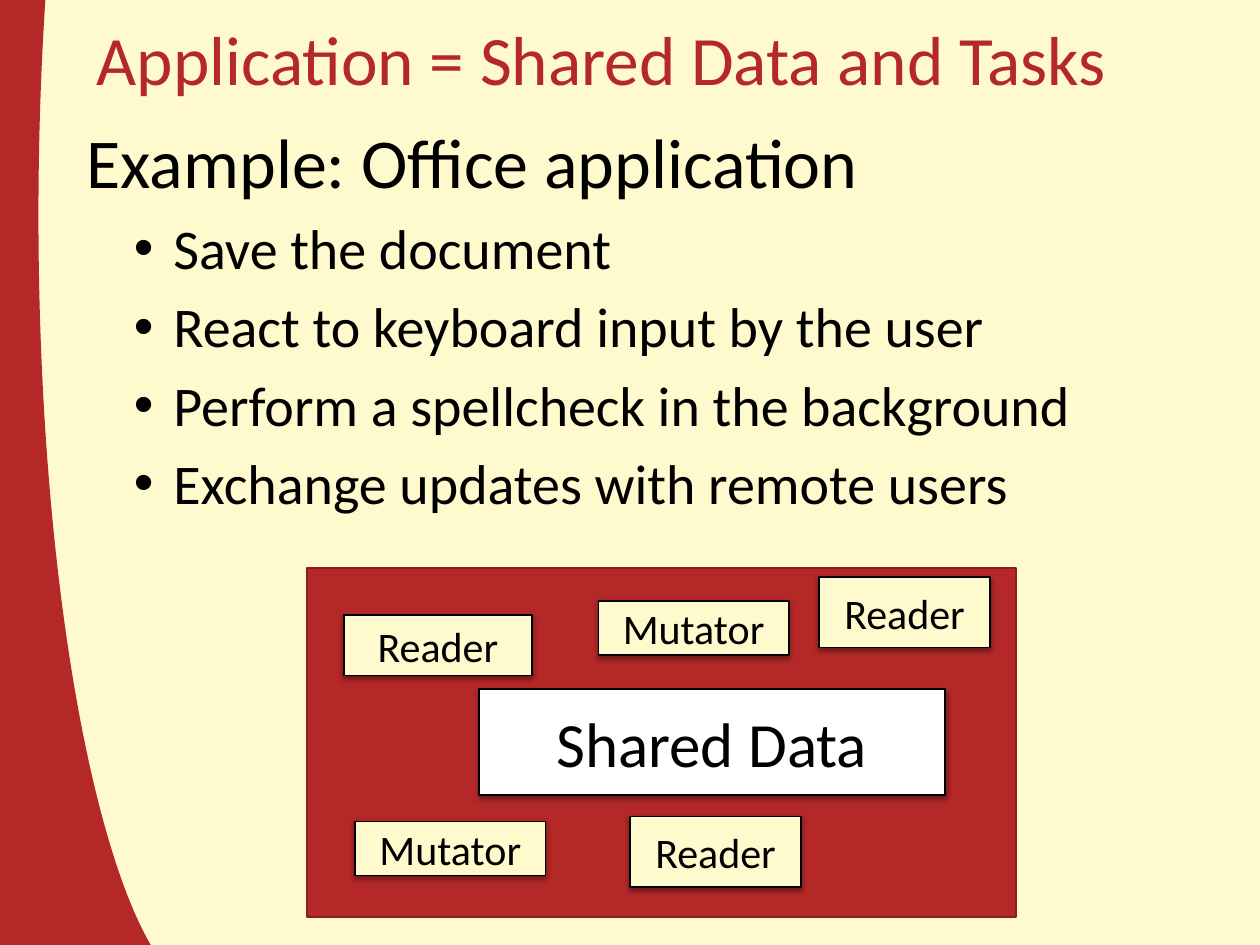
"""Build the slide on an application as shared data and tasks."""
from dataclasses import dataclass

import lxml.etree
import pptx
import pptx.dml.color
import pptx.enum.shapes
import pptx.enum.text
import pptx.oxml
import pptx.oxml.ns
import pptx.util

Pt = pptx.util.Pt
RGBColor = pptx.dml.color.RGBColor
MSO_SHAPE = pptx.enum.shapes.MSO_SHAPE
PP_ALIGN = pptx.enum.text.PP_ALIGN
MSO_ANCHOR = pptx.enum.text.MSO_ANCHOR

CREAM = RGBColor(0xFF, 0xFA, 0xCD)
RED = RGBColor(0xB4, 0x28, 0x28)
DARK_RED = RGBColor(0x85, 0x1E, 0x1E)
BLACK = RGBColor(0, 0, 0)
WHITE = RGBColor(0xFF, 0xFF, 0xFF)
FONT = "Calibri"
HANGING = 22.5
BULLET_MARGIN = 49.5


@dataclass
class Box:
    """A labelled block inside the application."""
    label: str
    left: float
    top: float
    width: float
    height: float
    fill: RGBColor = CREAM
    size: float = 24


BOXES = [
    Box("Shared Data", 273.6, 393.8, 266.4, 60.5, WHITE, 36),
    Box("Reader", 468, 329.8, 97.9, 40.3),
    Box("Mutator", 342, 343.4, 108.7, 31),
    Box("Reader", 196.6, 351.4, 107.3, 34.6),
    Box("Mutator", 203, 469.4, 108.7, 31),
    Box("Reader", 360, 466.6, 97.9, 40.3),
]
TASKS = [
    "Save the document",
    "React to keyboard input by the user",
    "Perform a spellcheck in the background",
    "Exchange updates with remote users",
]


def write(paragraph, text: str, *, size: float, color: RGBColor = BLACK,
          align=PP_ALIGN.LEFT, before: float = 0, margin: float = 0,
          bullet: str = "") -> None:
    """Fill a paragraph with formatted text."""
    run = paragraph.add_run()
    run.text = text
    run.font.size = Pt(size)
    run.font.name = FONT
    run.font.color.rgb = color
    paragraph.alignment = align
    paragraph.space_before = Pt(before)
    if margin:
        properties = paragraph._p.get_or_add_pPr()
        properties.set("marL", str(Pt(margin)))
        properties.set("indent", str(-Pt(HANGING)))
        if bullet:
            face = lxml.etree.SubElement(properties, pptx.oxml.ns.qn("a:buFont"))
            face.set("typeface", "Arial")
            mark = lxml.etree.SubElement(properties, pptx.oxml.ns.qn("a:buChar"))
            mark.set("char", bullet)


def add_block(slide, left: float, top: float, width: float, height: float,
              fill: RGBColor, line: RGBColor):
    """Draw a flat outlined rectangle."""
    block = slide.shapes.add_shape(
        MSO_SHAPE.RECTANGLE, Pt(left), Pt(top), Pt(width), Pt(height))
    block.shadow.inherit = False
    block.fill.solid()
    block.fill.fore_color.rgb = fill
    block.line.color.rgb = line
    block.line.width = Pt(1)
    return block


def add_shadow(block) -> None:
    """Cast a soft shadow straight down."""
    effects = block.element.spPr.find(pptx.oxml.ns.qn("a:effectLst"))
    effects.append(pptx.oxml.parse_xml(
        f'<a:outerShdw {pptx.oxml.ns.nsdecls("a")} blurRad="{Pt(3.1)}" '
        f'dist="{Pt(1.6)}" dir="5400000" algn="ctr" rotWithShape="0">'
        '<a:srgbClr val="000000"><a:alpha val="38000"/></a:srgbClr>'
        '</a:outerShdw>'))


def add_box(slide, box: Box) -> None:
    """Draw a labelled box with its shadow."""
    block = add_block(slide, box.left, box.top, box.width, box.height, box.fill, BLACK)
    add_shadow(block)
    block.text_frame.vertical_anchor = MSO_ANCHOR.MIDDLE
    write(block.text_frame.paragraphs[0], box.label, size=box.size, align=PP_ALIGN.CENTER)


def add_swoosh(slide) -> None:
    """Draw the broad red curve along the left edge."""
    swoosh = slide.shapes.add_shape(MSO_SHAPE.ARC, Pt(-18), Pt(-347.8), Pt(221.8), Pt(941.8))
    swoosh.shadow.inherit = False
    swoosh.element.spPr.xfrm.set("flipH", "1")
    for index, degrees in enumerate((270, 90)):
        swoosh.adjustments[index] = degrees * 0.6
    swoosh.fill.background()
    swoosh.line.color.rgb = RED
    swoosh.line.width = Pt(80)


def add_title(slide, text: str) -> None:
    """Place and format the slide title."""
    title = slide.shapes.title
    title.left, title.top, title.width, title.height = Pt(48.2), Pt(-12.2), Pt(648), Pt(90)
    title.text_frame.vertical_anchor = MSO_ANCHOR.MIDDLE
    write(title.text_frame.paragraphs[0], text, size=39.6, color=RED)


def add_example(slide, heading: str, tasks: list[str]) -> None:
    """Write the example heading and its bulleted tasks."""
    example = slide.shapes.add_textbox(Pt(42.5), Pt(64.1), Pt(677.5), Pt(284.4)).text_frame
    example.word_wrap = True
    write(example.paragraphs[0], heading, size=40, before=8, margin=HANGING)
    for task in tasks:
        write(example.add_paragraph(), task, size=32, before=6.4,
              margin=BULLET_MARGIN, bullet="•")


def main() -> None:
    """Assemble and save the presentation."""
    deck = pptx.Presentation()
    deck.slide_width, deck.slide_height = Pt(720), Pt(540)
    slide = deck.slides.add_slide(deck.slide_layouts[5])
    slide.background.fill.solid()
    slide.background.fill.fore_color.rgb = CREAM
    add_swoosh(slide)
    add_title(slide, "Application = Shared Data and Tasks")
    add_block(slide, 175.4, 324.7, 405.4, 199.4, RED, DARK_RED)
    add_example(slide, "Example: Office application", TASKS)
    for box in BOXES:
        add_box(slide, box)
    deck.save("out.pptx")


if __name__ == "__main__":
    main()
